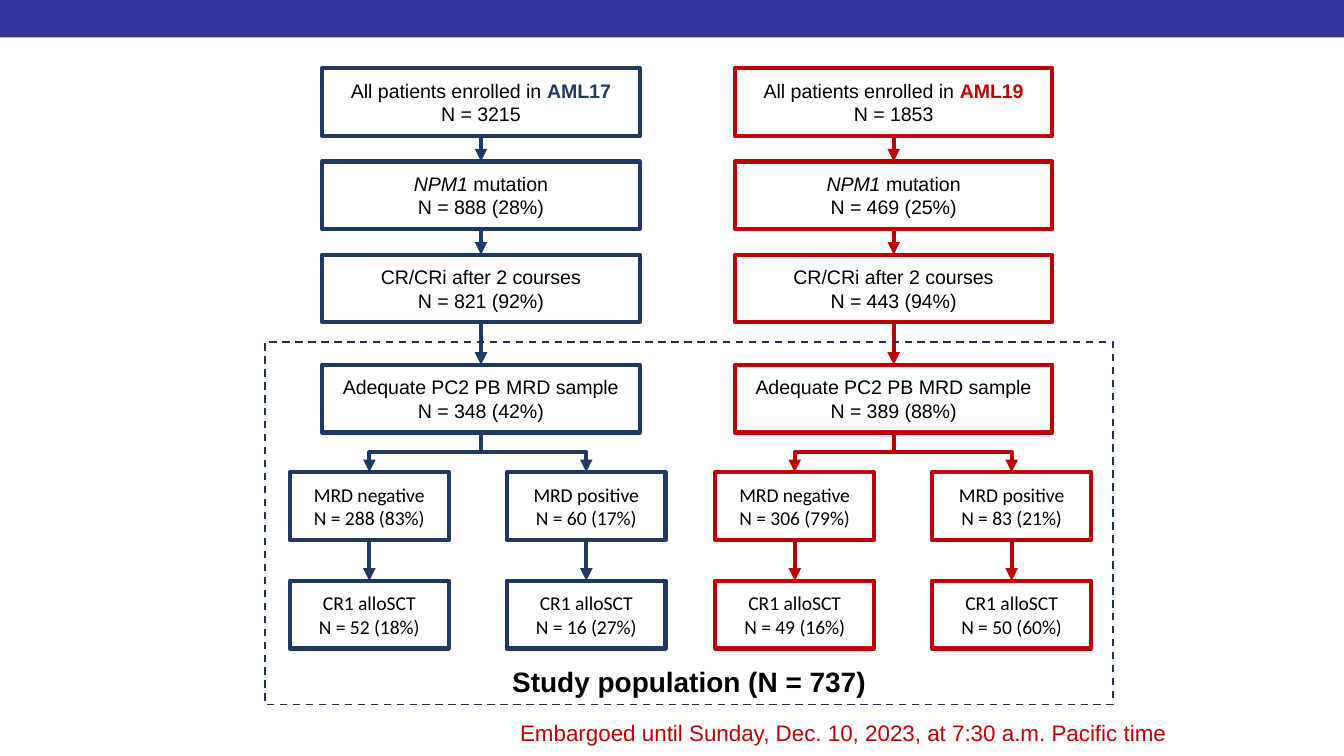
from lxml.etree import SubElement
from pptx import Presentation
from pptx.dml.color import RGBColor
from pptx.enum.dml import MSO_LINE
from pptx.enum.shapes import MSO_CONNECTOR, MSO_SHAPE
from pptx.enum.text import MSO_ANCHOR, PP_ALIGN
from pptx.oxml.ns import qn
from pptx.util import Cm, Pt

NAVY = RGBColor(0x20, 0x38, 0x64)
RED = RGBColor(0xC0, 0x00, 0x00)
BAND = RGBColor(0x33, 0x33, 0x99)
FRAME = RGBColor(0x1E, 0x32, 0x56)
WHITE = RGBColor(0xFF, 0xFF, 0xFF)
BLACK = RGBColor(0x00, 0x00, 0x00)

# Each trial: main steps from top to bottom, then one branch per MRD result.
TRIALS = [
    {
        "name": "AML17", "color": NAVY, "center": 9.09, "branch_centers": (6.98, 11.08),
        "counts": ["N = 3215", "N = 888 (28%)", "N = 821 (92%)", "N = 348 (42%)"],
        "branches": [("N = 288 (83%)", "N = 52 (18%)"), ("N = 60 (17%)", "N = 16 (27%)")],
    },
    {
        "name": "AML19", "color": RED, "center": 16.89, "branch_centers": (15.02, 19.12),
        "counts": ["N = 1853", "N = 469 (25%)", "N = 443 (94%)", "N = 389 (88%)"],
        "branches": [("N = 306 (79%)", "N = 49 (16%)"), ("N = 83 (21%)", "N = 50 (60%)")],
    },
]
STEPS = ["All patients enrolled in ", "NPM1", "CR/CRi after 2 courses",
         "Adequate PC2 PB MRD sample"]
RESULTS = ["MRD negative", "MRD positive"]
TRANSPLANT = "CR1 alloSCT"
POPULATION = "Study population (N = 737)"
EMBARGO = "Embargoed until Sunday, Dec. 10, 2023, at 7:30 a.m. Pacific time"

STEP_TOPS = [1.29, 3.05, 4.81, 6.89]
RESULT_TOP, TRANSPLANT_TOP = 8.92, 10.97
STEP_WIDTH, BRANCH_WIDTH, BOX_HEIGHT = 6.0, 3.0, 1.28

deck = Presentation()
deck.slide_width, deck.slide_height = Cm(25.4), Cm(14.28)
page = deck.slides.add_slide(deck.slide_layouts[6])


def format_span(span, size, color=BLACK, font="Arial", bold=False):
    span.font.name, span.font.size, span.font.bold = font, Pt(size), bold
    span.font.color.rgb = color


def add_rectangle(left, top, width, height):
    box = page.shapes.add_shape(MSO_SHAPE.RECTANGLE, Cm(left), Cm(top), Cm(width), Cm(height))
    box.shadow.inherit = False
    return box


def add_box(center, top, width, color, label, count, font="Arial"):
    """Outlined box with a label line and a count line; returns the label paragraph."""
    box = add_rectangle(center - width / 2, top, width, BOX_HEIGHT)
    box.fill.solid()
    box.fill.fore_color.rgb = WHITE
    box.line.color.rgb = color
    box.line.width = Pt(2.25)
    frame = box.text_frame
    frame.word_wrap = True
    frame.margin_left = frame.margin_right = frame.margin_top = frame.margin_bottom = Cm(0.18)
    frame.vertical_anchor = MSO_ANCHOR.MIDDLE
    frame.text = f"{label}\n{count}"
    for para in frame.paragraphs:
        para.alignment = PP_ALIGN.CENTER
        format_span(para.runs[0], 10.5, font=font)
    return frame.paragraphs[0]


def add_arrow(start, end, color, kind=MSO_CONNECTOR.STRAIGHT):
    arrow = page.shapes.add_connector(kind, *(Cm(value) for value in start + end))
    arrow.line.color.rgb = color
    arrow.line.width = Pt(2.25)
    SubElement(arrow.line._get_or_add_ln(), qn("a:tailEnd"), type="triangle")
    SubElement(arrow._element.spPr, qn("a:effectLst"))
    return arrow


def add_down_arrow(center, upper_top, lower_top, color):
    add_arrow((center, upper_top + BOX_HEIGHT), (center, lower_top), color)


def add_branch_arrow(start_x, end_x, color):
    """Elbow that leaves downwards: laid out on its side, then turned a quarter."""
    start_y = STEP_TOPS[-1] + BOX_HEIGHT
    middle_x, middle_y = (start_x + end_x) / 2, (start_y + RESULT_TOP) / 2
    half_span = abs(end_x - start_x) / 2
    to_right = end_x > start_x
    half_drop = (RESULT_TOP - start_y) / 2 * (-1 if to_right else 1)
    arrow = add_arrow((middle_x - half_drop, middle_y - half_span),
                      (middle_x + half_drop, middle_y + half_span),
                      color, MSO_CONNECTOR.ELBOW)
    arrow._element.spPr.xfrm.set("rot", str((270 if to_right else 90) * 60000))


def add_trial(trial):
    color, center = trial["color"], trial["center"]
    labels = [add_box(center, top, STEP_WIDTH, color, step, count)
              for top, step, count in zip(STEP_TOPS, STEPS, trial["counts"])]
    name = labels[0].add_run()
    name.text = trial["name"]
    format_span(name, 10.5, color, bold=True)
    labels[1].runs[0].font.italic = True
    mutation = labels[1].add_run()
    mutation.text = " mutation"
    format_span(mutation, 10.5)
    for upper, lower in zip(STEP_TOPS, STEP_TOPS[1:]):
        add_down_arrow(center, upper, lower, color)

    for x, result, counts in zip(trial["branch_centers"], RESULTS, trial["branches"]):
        add_box(x, RESULT_TOP, BRANCH_WIDTH, color, result, counts[0], "Calibri")
        add_box(x, TRANSPLANT_TOP, BRANCH_WIDTH, color, TRANSPLANT, counts[1], "Calibri")
        add_branch_arrow(center, x, color)
        add_down_arrow(x, RESULT_TOP, TRANSPLANT_TOP, color)


band = add_rectangle(0, -0.02, 25.4, 0.73)
band.fill.solid()
band.fill.fore_color.rgb = BAND
band.line.fill.background()

for trial in TRIALS:
    add_trial(trial)

population = add_rectangle(5.01, 6.46, 16.03, 6.85)
population.fill.background()
population.line.color.rgb = FRAME
population.line.width = Pt(1)
population.line.dash_style = MSO_LINE.DASH
population.text_frame.vertical_anchor = MSO_ANCHOR.BOTTOM
population.text_frame.text = POPULATION
population.text_frame.paragraphs[0].alignment = PP_ALIGN.CENTER
format_span(population.text_frame.paragraphs[0].runs[0], 15, bold=True)

embargo = page.shapes.add_textbox(Cm(9.58), Cm(13.46), Cm(14.8), Cm(0.77))
embargo.text_frame.word_wrap = True
embargo.text_frame.text = EMBARGO
format_span(embargo.text_frame.paragraphs[0].runs[0], 12, RED)

deck.save("out.pptx")
